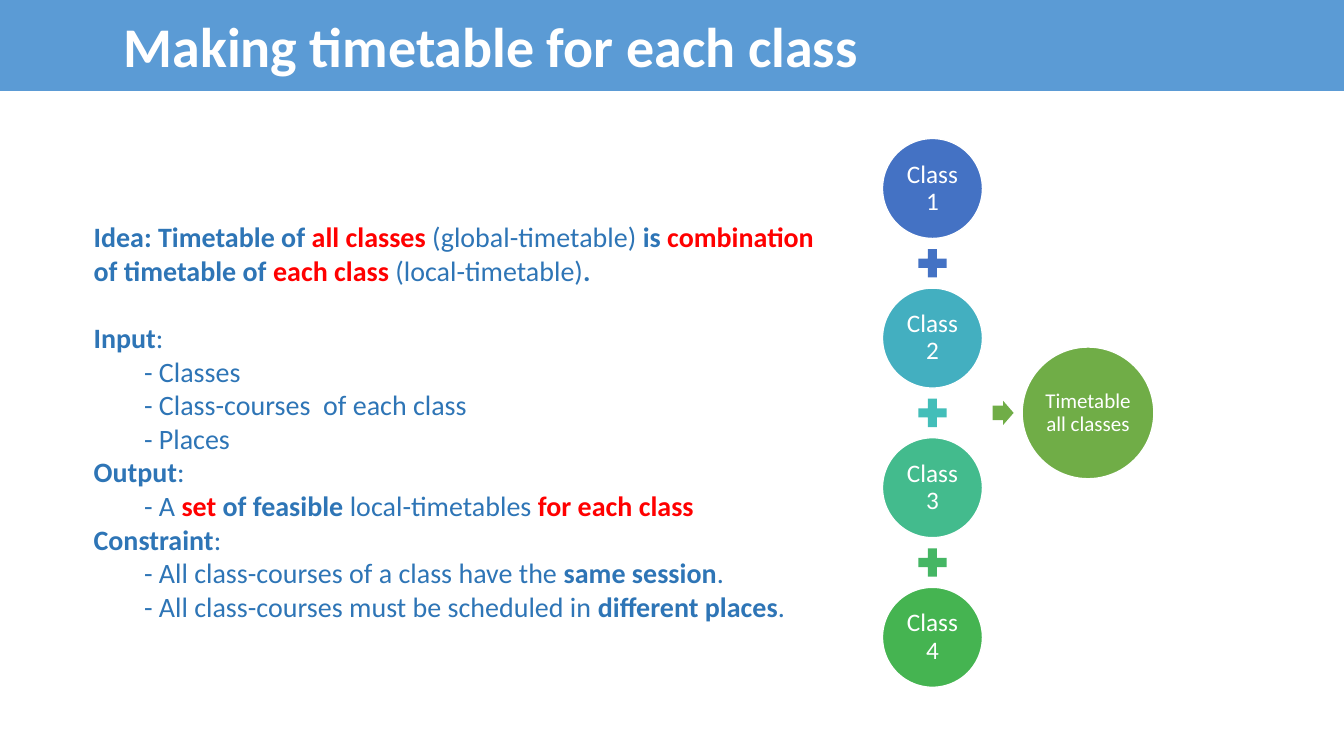
"""Build the slide about making a timetable for each class."""
from dataclasses import dataclass

import pptx
import pptx.dml.color
import pptx.enum.shapes
import pptx.enum.text
import pptx.util

Cm = pptx.util.Cm
Pt = pptx.util.Pt
ShapeKind = pptx.enum.shapes.MSO_SHAPE
Anchor = pptx.enum.text.MSO_ANCHOR
Align = pptx.enum.text.PP_ALIGN
AutoSize = pptx.enum.text.MSO_AUTO_SIZE

FONT = "Calibri"
COLOURS = {
    "band": "5B9BD5",
    "white": "FFFFFF",
    "text": "2E75B6",
    "accent": "FF0000",
    "result": "70AD47",
}
CLASS_COLOURS = ["4472C4", "43AFC0", "43BB8D", "45B451"]
PLUS_COLOURS = ["4472C4", "43BEB9", "45B664"]

CLASS_X = 23.5
FIRST_CLASS_Y = 4.75
CLASS_PITCH = 3.77
RESULT_Y = FIRST_CLASS_Y + CLASS_PITCH * (len(CLASS_COLOURS) - 1) / 2


@dataclass
class Span:
    """A stretch of text in one style."""

    text: str
    bold: bool = False
    colour: str = COLOURS["text"]


@dataclass
class Line:
    """A paragraph of the body text."""

    spans: list[Span]
    indented: bool = False
    space_before: float = 0


@dataclass
class Figure:
    """A diagram shape placed by its centre, in centimetres."""

    kind: ShapeKind
    x: float
    y: float
    width: float
    height: float
    colour: str
    label: str = ""
    size: float = 18


def bold(text: str) -> Span:
    """Return bold text in the body colour."""
    return Span(text, bold=True)


def accent(text: str) -> Span:
    """Return bold text in the accent colour."""
    return Span(text, bold=True, colour=COLOURS["accent"])


def heading(text: str, space_before: float = 0) -> Line:
    """Return a bold section word followed by a plain colon."""
    return Line([bold(text), Span(":")], space_before=space_before)


def item(*spans: Span) -> Line:
    """Return an indented line."""
    return Line(list(spans), indented=True)


BODY = [
    Line([
        bold("Idea: Timetable of "), accent("all classes "), Span("(global-timetable)"),
        bold(" is "), accent("combination"), bold(" of timetable of "),
        accent("each class "), Span("(local-timetable)"), bold("."),
    ]),
    heading("Input", space_before=24),
    item(Span("- Classes")),
    item(Span("- Class-courses  of each class")),
    item(Span("- Places")),
    heading("Output"),
    item(Span("- A "), accent("set"), bold(" of feasible "),
         Span("local-timetables "), accent("for each class")),
    heading("Constraint"),
    item(Span("- All class-courses of a class have the "), bold("same session"), Span(".")),
    item(Span("- All class-courses must be scheduled in "), bold("different places"), Span(".")),
]

FIGURES = [
    Figure(ShapeKind.OVAL, CLASS_X, FIRST_CLASS_Y + CLASS_PITCH * index, 2.52, 2.52,
           colour, f"Class {index + 1}")
    for index, colour in enumerate(CLASS_COLOURS)
] + [
    Figure(ShapeKind.MATH_PLUS, CLASS_X, FIRST_CLASS_Y + CLASS_PITCH * (index + 0.5),
           0.97, 0.97, colour)
    for index, colour in enumerate(PLUS_COLOURS)
] + [
    Figure(ShapeKind.RIGHT_ARROW, 25.28, RESULT_Y, 0.53, 0.61, COLOURS["result"]),
    Figure(ShapeKind.OVAL, 27.42, RESULT_Y, 3.32, 3.32, COLOURS["result"],
           "Timetable all classes", 15),
]


def rgb(colour: str) -> pptx.dml.color.RGBColor:
    """Turn a hex string into a colour."""
    return pptx.dml.color.RGBColor.from_string(colour)


def format_font(font, size: float, colour: str, is_bold: bool = False) -> None:
    """Set the typeface, size, weight and colour of a font."""
    font.name = FONT
    font.size = Pt(size)
    font.bold = is_bold
    font.color.rgb = rgb(colour)


def draw_title(slide) -> None:
    """Turn the title placeholder into the coloured band."""
    title = slide.shapes.title
    title.left, title.top, title.width, title.height = Cm(0), Cm(0), Cm(33.87), Cm(2.29)
    title.fill.solid()
    title.fill.fore_color.rgb = rgb(COLOURS["band"])
    text_frame = title.text_frame
    text_frame.text = "Making timetable for each class"
    text_frame.auto_size = AutoSize.NONE
    text_frame.vertical_anchor = Anchor.MIDDLE
    text_frame.margin_left = Cm(3.12)
    paragraph = text_frame.paragraphs[0]
    paragraph.alignment = Align.LEFT
    format_font(paragraph.runs[0].font, 40, COLOURS["white"], True)


def draw_body(slide) -> None:
    """Write the idea, input, output and constraint lines."""
    text_frame = slide.shapes.add_textbox(Cm(2.11), Cm(5.41), Cm(19.1), Cm(11.38)).text_frame
    text_frame.word_wrap = True
    text_frame.auto_size = AutoSize.SHAPE_TO_FIT_TEXT
    for index, line in enumerate(BODY):
        paragraph = text_frame.add_paragraph() if index else text_frame.paragraphs[0]
        paragraph.space_before = Pt(line.space_before)
        if line.indented:
            paragraph.level = 1
            paragraph._p.get_or_add_pPr().set("marL", str(Cm(1.27)))
        for span in line.spans:
            run = paragraph.add_run()
            run.text = span.text
            format_font(run.font, 20, span.colour, span.bold)


def draw_figure(slide, figure: Figure) -> None:
    """Draw one shape of the diagram with its label."""
    shape = slide.shapes.add_shape(
        figure.kind, Cm(figure.x - figure.width / 2), Cm(figure.y - figure.height / 2),
        Cm(figure.width), Cm(figure.height))
    shape.shadow.inherit = False
    shape.fill.solid()
    shape.fill.fore_color.rgb = rgb(figure.colour)
    if figure.kind == ShapeKind.RIGHT_ARROW:
        shape.adjustments[0] = 0.6
    if not figure.label:
        shape.line.fill.background()
        return
    shape.line.color.rgb = rgb(COLOURS["white"])
    shape.line.width = Pt(1)
    text_frame = shape.text_frame
    text_frame.text = figure.label
    text_frame.word_wrap = True
    text_frame.vertical_anchor = Anchor.MIDDLE
    text_frame.margin_left = text_frame.margin_right = Cm(0.06)
    text_frame.margin_top = text_frame.margin_bottom = Cm(0.06)
    paragraph = text_frame.paragraphs[0]
    paragraph.alignment = Align.CENTER
    paragraph.line_spacing = 0.9
    format_font(paragraph.runs[0].font, figure.size, COLOURS["white"])


def main() -> None:
    """Build and save the presentation."""
    presentation = pptx.Presentation()
    presentation.slide_width, presentation.slide_height = Cm(33.87), Cm(19.05)
    slide = presentation.slides.add_slide(presentation.slide_layouts[5])
    draw_title(slide)
    draw_body(slide)
    for figure in FIGURES:
        draw_figure(slide, figure)
    presentation.save("out.pptx")


if __name__ == "__main__":
    main()
